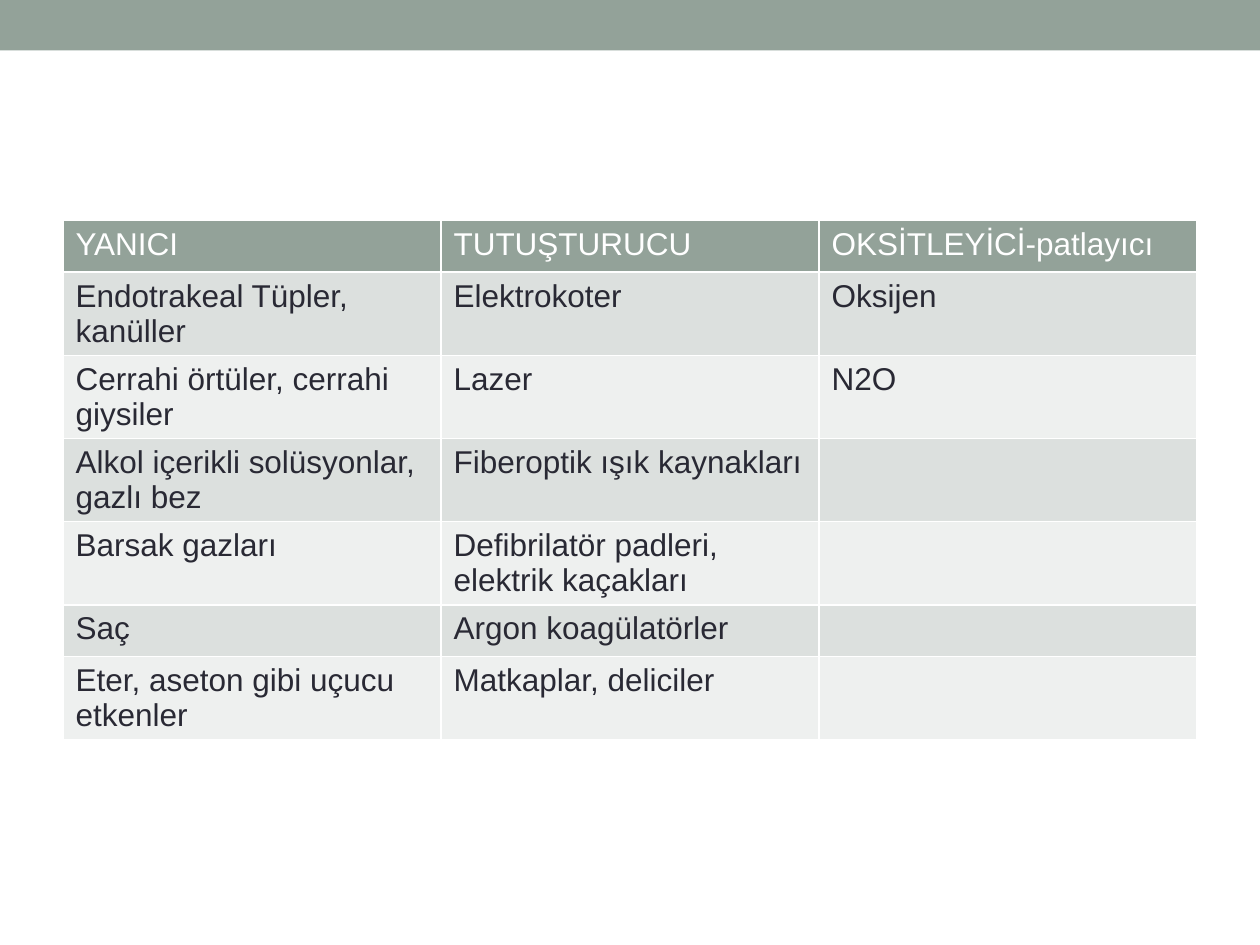
import pptx
import pptx.dml.color
import pptx.enum.shapes
import pptx.util

Inches = pptx.util.Inches
RGBColor = pptx.dml.color.RGBColor

SAGE = RGBColor(0x93, 0xA2, 0x99)
BAND_DARK = RGBColor(0xDC, 0xE0, 0xDE)
BAND_LIGHT = RGBColor(0xEE, 0xF0, 0xEF)
INK = RGBColor(0x29, 0x29, 0x34)
WHITE = RGBColor(0xFF, 0xFF, 0xFF)

FIRE_TRIANGLE = [
    ("YANICI", "TUTUŞTURUCU", "OKSİTLEYİCİ-patlayıcı"),
    ("Endotrakeal Tüpler, kanüller", "Elektrokoter", "Oksijen"),
    ("Cerrahi örtüler, cerrahi giysiler", "Lazer", "N2O"),
    ("Alkol içerikli solüsyonlar, gazlı bez", "Fiberoptik ışık kaynakları", ""),
    ("Barsak gazları", "Defibrilatör padleri, elektrik kaçakları", ""),
    ("Saç", "Argon koagülatörler", ""),
    ("Eter, aseton gibi uçucu etkenler", "Matkaplar, deliciler", ""),
]


def add_top_band(slide, left, top, width, height):
    band = slide.shapes.add_shape(
        pptx.enum.shapes.MSO_SHAPE.RECTANGLE, left, top, width, height
    )
    band.shadow.inherit = False
    band.fill.solid()
    band.fill.fore_color.rgb = SAGE
    band.line.fill.background()


def format_cell(cell, text, fill_color, text_color):
    cell.fill.solid()
    cell.fill.fore_color.rgb = fill_color
    cell.text_frame.text = text
    font = cell.text_frame.paragraphs[0].font
    font.size = pptx.util.Pt(18)
    for run in cell.text_frame.paragraphs[0].runs:
        run.font.name = "Arial"
        run.font.size = pptx.util.Pt(18)
        run.font.bold = False
        run.font.color.rgb = text_color


def add_hazard_table(slide, left, top, width, row_height):
    row_count, column_count = len(FIRE_TRIANGLE), len(FIRE_TRIANGLE[0])
    table = slide.shapes.add_table(
        row_count, column_count, left, top, width, row_height * row_count
    ).table
    for row_index, texts in enumerate(FIRE_TRIANGLE):
        if row_index == 0:
            fill_color, text_color = SAGE, WHITE
        else:
            fill_color = BAND_DARK if row_index % 2 else BAND_LIGHT
            text_color = INK
        for column_index, text in enumerate(texts):
            format_cell(
                table.cell(row_index, column_index), text, fill_color, text_color
            )


def main():
    presentation = pptx.Presentation()
    presentation.slide_width = Inches(10)
    presentation.slide_height = Inches(7.5)
    slide = presentation.slides.add_slide(presentation.slide_layouts[6])
    add_top_band(slide, 0, 0, presentation.slide_width, Inches(0.4))
    add_hazard_table(slide, Inches(0.5), Inches(1.75), Inches(9), Inches(0.41))
    presentation.save("out.pptx")


if __name__ == "__main__":
    main()
